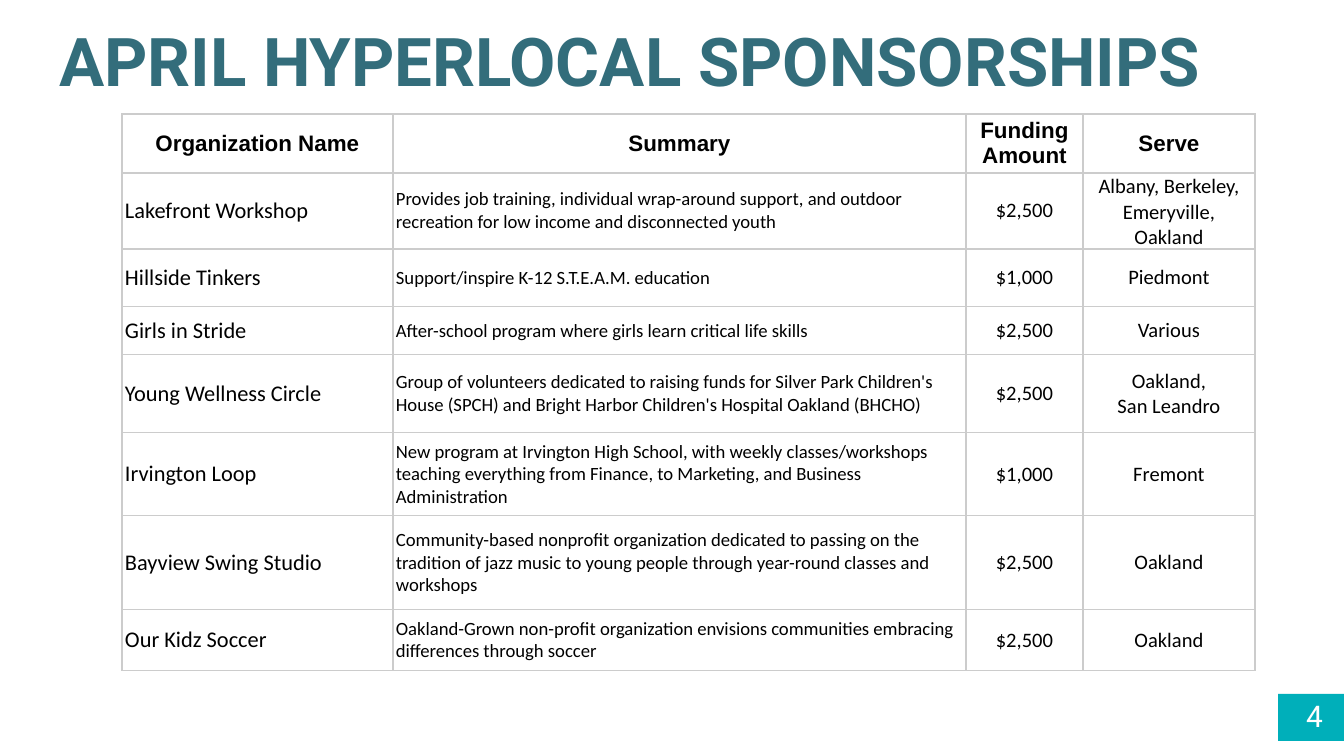
from lxml import etree
from pptx import Presentation
from pptx.dml.color import RGBColor
from pptx.enum.shapes import MSO_SHAPE
from pptx.enum.text import MSO_ANCHOR, PP_ALIGN
from pptx.oxml.ns import qn
from pptx.util import Emu, Pt

EMU_PER_PX = 914400 / 134.4
SLIDE_WIDTH, SLIDE_HEIGHT = 1344, 756

TEAL = RGBColor(0x33, 0x6D, 0x7B)
CYAN = RGBColor(0x00, 0xAF, 0xBA)
WHITE = RGBColor(0xFF, 0xFF, 0xFF)
BLACK = RGBColor(0x00, 0x00, 0x00)
BORDER_GREY = RGBColor(0xCC, 0xCC, 0xCC)

LEFT, CENTER, RIGHT = PP_ALIGN.LEFT, PP_ALIGN.CENTER, PP_ALIGN.RIGHT
MIDDLE = MSO_ANCHOR.MIDDLE
RECTANGLE = MSO_SHAPE.RECTANGLE

HEADINGS = ("Organization Name", "Summary", "Funding Amount", "Serve")
SPONSORSHIPS = (
    ("Lakefront Workshop",
     "Provides job training, individual wrap-around support, and outdoor "
     "recreation for low income and disconnected youth",
     "$2,500", "Albany, Berkeley, Emeryville, Oakland"),
    ("Hillside Tinkers", "Support/inspire K-12 S.T.E.A.M. education",
     "$1,000", "Piedmont"),
    ("Girls in Stride",
     "After-school program where girls learn critical life skills",
     "$2,500", "Various"),
    ("Young Wellness Circle",
     "Group of volunteers dedicated to raising funds for Silver Park Children's "
     "House (SPCH) and Bright Harbor Children's Hospital Oakland (BHCHO)",
     "$2,500", "Oakland,\nSan Leandro"),
    ("Irvington Loop",
     "New program at Irvington High School, with weekly classes/workshops "
     "teaching everything from Finance, to Marketing, and Business Administration",
     "$1,000", "Fremont"),
    ("Bayview Swing Studio",
     "Community-based nonprofit organization dedicated to passing on the "
     "tradition of jazz music to young people through year-round classes and workshops",
     "$2,500", "Oakland"),
    ("Our Kidz Soccer",
     "Oakland-Grown non-profit organization envisions communities embracing "
     "differences through soccer",
     "$2,500", "Oakland"),
)
COLUMN_WIDTHS = (271, 573, 117, 172)
ROW_HEIGHTS = (59, 74, 58, 48, 78, 83, 94, 61)
HEADING_FORMAT = dict(font="Arial", size=12, bold=True, align=CENTER)
COLUMN_FORMATS = (
    dict(size=12),
    dict(size=10),
    dict(size=11, align=CENTER),
    dict(size=11, align=CENTER),
)


def px(length):
    return Emu(round(length * EMU_PER_PX))


def write_text(frame, text, font="Calibri", size=12, color=BLACK, bold=False, align=LEFT):
    """Fill a text frame, one paragraph per line of text."""
    frame.word_wrap = True
    frame.text = text
    for paragraph in frame.paragraphs:
        paragraph.alignment = align
        for run in paragraph.runs:
            run.font.name = font
            run.font.size = Pt(size)
            run.font.bold = bold
            run.font.color.rgb = color


def set_borders(cell, color, width):
    properties = cell._tc.get_or_add_tcPr()
    for position, side in enumerate(("a:lnL", "a:lnR", "a:lnT", "a:lnB")):
        line = etree.Element(qn(side), w=str(Pt(width)))
        fill = etree.SubElement(line, qn("a:solidFill"))
        etree.SubElement(fill, qn("a:srgbClr"), val=str(color))
        properties.insert(position, line)


class SlideBuilder:
    def __init__(self, slide, background=WHITE, border=BORDER_GREY, border_width=0.75):
        self.slide = slide
        self.border = border
        self.border_width = border_width
        slide.background.fill.solid()
        slide.background.fill.fore_color.rgb = background

    def block(self, left, top, width, height, color):
        shape = self.slide.shapes.add_shape(
            RECTANGLE, px(left), px(top), px(width), px(height))
        shape.shadow.inherit = False
        shape.fill.solid()
        shape.fill.fore_color.rgb = color
        shape.line.fill.background()

    def text(self, left, top, width, height, text, **text_format):
        frame = self.slide.shapes.add_textbox(
            px(left), px(top), px(width), px(height)).text_frame
        frame.vertical_anchor = MIDDLE
        write_text(frame, text, **text_format)

    def cell(self, cell, text, **text_format):
        cell.margin_left = cell.margin_right = px(3)
        cell.margin_top = cell.margin_bottom = px(1)
        cell.vertical_anchor = MIDDLE
        cell.fill.background()
        set_borders(cell, self.border, self.border_width)
        write_text(cell.text_frame, text, **text_format)

    def table(self, left, top, widths, heights, headings, records):
        table = self.slide.shapes.add_table(
            len(heights), len(widths), px(left), px(top),
            px(sum(widths)), px(sum(heights))).table
        table.first_row = table.horz_banding = False
        for column, width in zip(table.columns, widths):
            column.width = px(width)
        for row, height in zip(table.rows, heights):
            row.height = px(height)
        for column, heading in enumerate(headings):
            self.cell(table.cell(0, column), heading, **HEADING_FORMAT)
        for row, record in enumerate(records, start=1):
            for column, value in enumerate(record):
                self.cell(table.cell(row, column), value, **COLUMN_FORMATS[column])


def main():
    deck = Presentation()
    deck.slide_width, deck.slide_height = px(SLIDE_WIDTH), px(SLIDE_HEIGHT)
    builder = SlideBuilder(deck.slides.add_slide(deck.slide_layouts[6]))

    builder.block(1278, 694, 66, 47, CYAN)
    builder.text(46, 20, 1210, 80, "APRIL HYPERLOCAL SPONSORSHIPS",
                 font="Roboto", size=36, color=TEAL, bold=True)
    builder.table(122, 114, COLUMN_WIDTHS, ROW_HEIGHTS, HEADINGS, SPONSORSHIPS)
    builder.text(1023, 695, 313, 41, "4",
                 font="Roboto", size=16, color=WHITE, align=RIGHT)

    deck.save("out.pptx")


if __name__ == "__main__":
    main()
